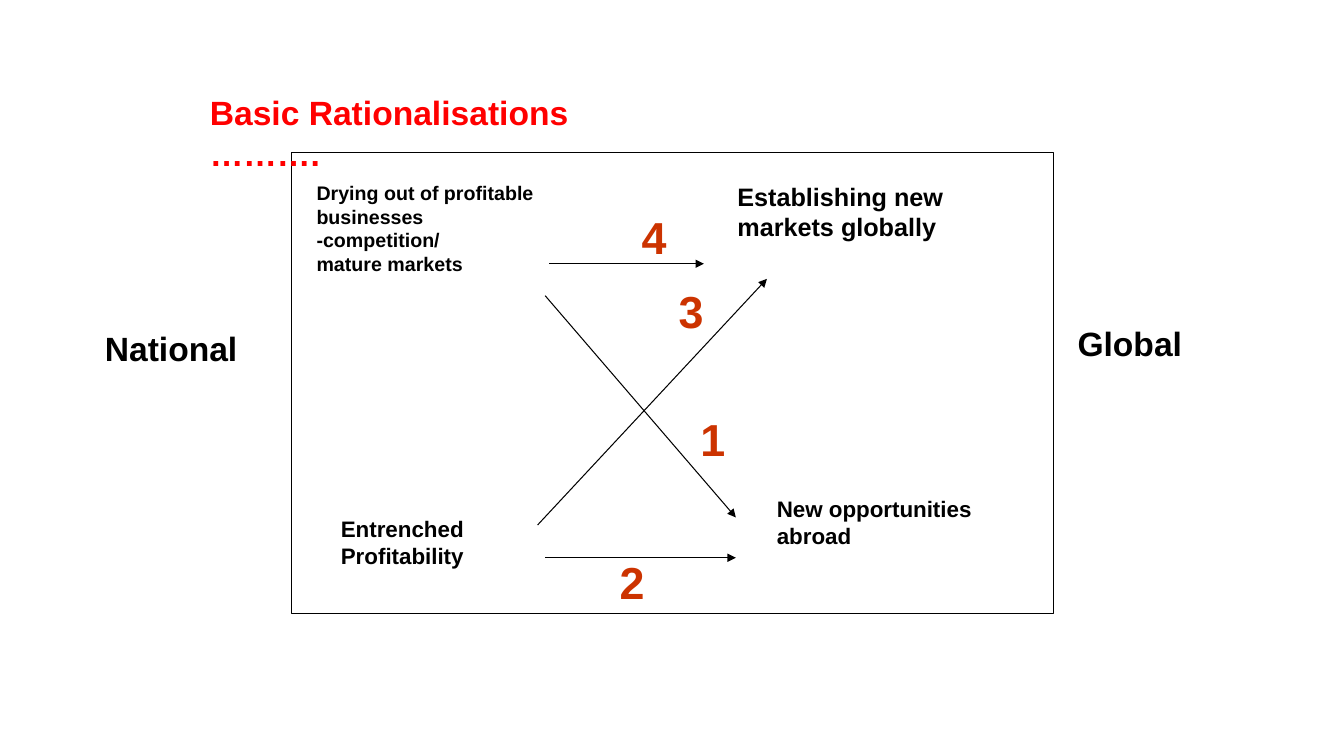
from typing import NamedTuple

from lxml.etree import SubElement
from pptx import Presentation
from pptx.dml.color import RGBColor
from pptx.enum.shapes import MSO_CONNECTOR as Line, MSO_SHAPE as Preset
from pptx.oxml.ns import qn
from pptx.util import Inches, Pt

COLOURS = {"black": "000000", "number": "CC3300", "title": "FF0000"}
FONT = "Arial"

# Grid of 160 columns by 90 rows
COLUMNS, ROWS = 160, 90
WIDTH, HEIGHT = Inches(13.33), Inches(7.5)


class Label(NamedTuple):
    text: str
    column: float
    row: float
    columns: float
    rows: float
    size: int
    colour: str = "black"


class Arrow(NamedTuple):
    start: tuple[float, float]
    end: tuple[float, float]


def across(columns: float) -> int:
    return round(WIDTH * columns / COLUMNS)


def down(rows: float) -> int:
    return round(HEIGHT * rows / ROWS)


def rgb(colour: str) -> RGBColor:
    return RGBColor.from_string(COLOURS[colour])


def add_text(slide, text: str, *, column: float, row: float, columns: float,
             rows: float, size: int, colour: str) -> None:
    box = slide.shapes.add_textbox(across(column), down(row), across(columns), down(rows))
    frame = box.text_frame
    frame.word_wrap = True
    frame.text = text
    for paragraph in frame.paragraphs:
        paragraph.font.name = FONT
        paragraph.font.size = Pt(size)
        paragraph.font.bold = True
        paragraph.font.color.rgb = rgb(colour)


def add_arrow(slide, arrow: Arrow) -> None:
    (x1, y1), (x2, y2) = arrow
    connector = slide.shapes.add_connector(
        Line.STRAIGHT, across(x1), down(y1), across(x2), down(y2))
    connector.line.color.rgb = rgb("black")
    connector.line.width = Pt(0.75)
    SubElement(connector.line._get_or_add_ln(), qn("a:tailEnd"), type="triangle")
    SubElement(connector._element.spPr, qn("a:effectLst"))


def add_frame(slide, column: float, row: float, columns: float, rows: float) -> None:
    frame = slide.shapes.add_shape(
        Preset.RECTANGLE, across(column), down(row), across(columns), down(rows))
    frame.shadow.inherit = False
    frame.fill.background()
    frame.line.color.rgb = rgb("black")
    frame.line.width = Pt(0.75)


# Rationales inside the frame, and the two sides
LABELS = [
    Label("Entrenched\nProfitability", 39.4, 60.7, 18.8, 7.7, 16),
    Label("Drying out of profitable\nbusinesses\n-competition/\nmature markets",
          36.5, 21, 29, 12.5, 14),
    Label("New opportunities\nabroad", 91.3, 58.4, 32.4, 7.7, 16),
    Label("Establishing new\nmarkets globally", 86.6, 21, 28, 8.5, 18),
    Label("Global", 127.1, 37.9, 15, 6, 24),
    Label("National", 11.3, 38.5, 18.4, 6, 24),
]

# Moves from national to global
ARROWS = [
    Arrow((64.9, 35.2), (87.6, 61.6)),
    Arrow((64.9, 66.4), (87.6, 66.4)),
    Arrow((64, 62.5), (91.3, 33.2)),
    Arrow((65.4, 31.4), (83.8, 31.4)),
]
NUMBER_PLACES = [(82.2, 48.4), (72.6, 65.4), (79.6, 33.2), (75.2, 24.4)]
NUMBERS = [Label(str(number), column, row, 5.2, 7.7, 32, "number")
           for number, (column, row) in enumerate(NUMBER_PLACES, 1)]

TITLE = Label("Basic Rationalisations ……….", 23.8, 10.4, 49.4, 10.4, 24, "title")


def main() -> None:
    deck = Presentation()
    deck.slide_width, deck.slide_height = WIDTH, HEIGHT
    slide = deck.slides.add_slide(deck.slide_layouts[6])

    add_frame(slide, 34.7, 18.1, 90.7, 54.9)
    for arrow in ARROWS:
        add_arrow(slide, arrow)
    for label in [*LABELS, *NUMBERS, TITLE]:
        add_text(slide, **label._asdict())

    deck.save("out.pptx")


if __name__ == "__main__":
    main()
